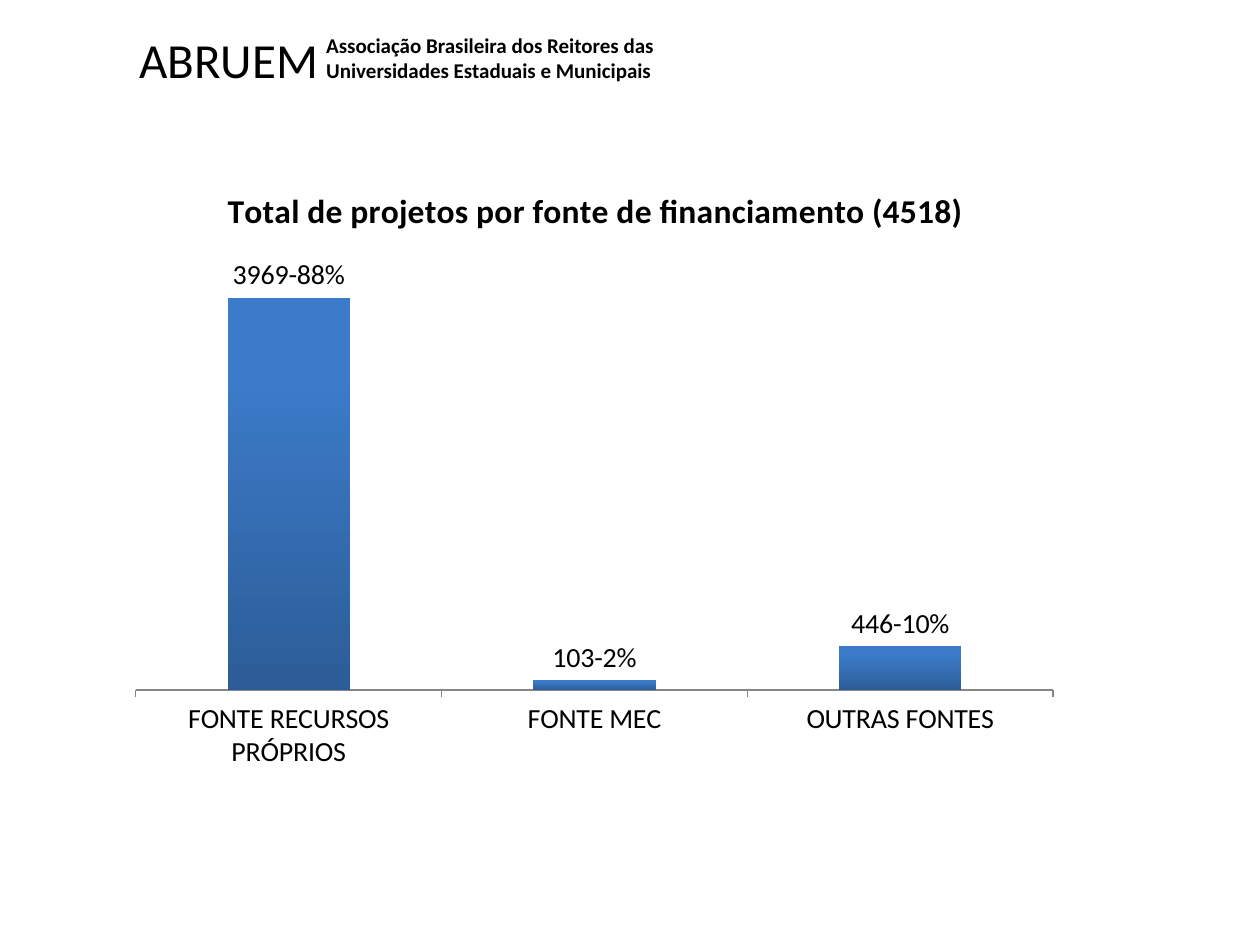
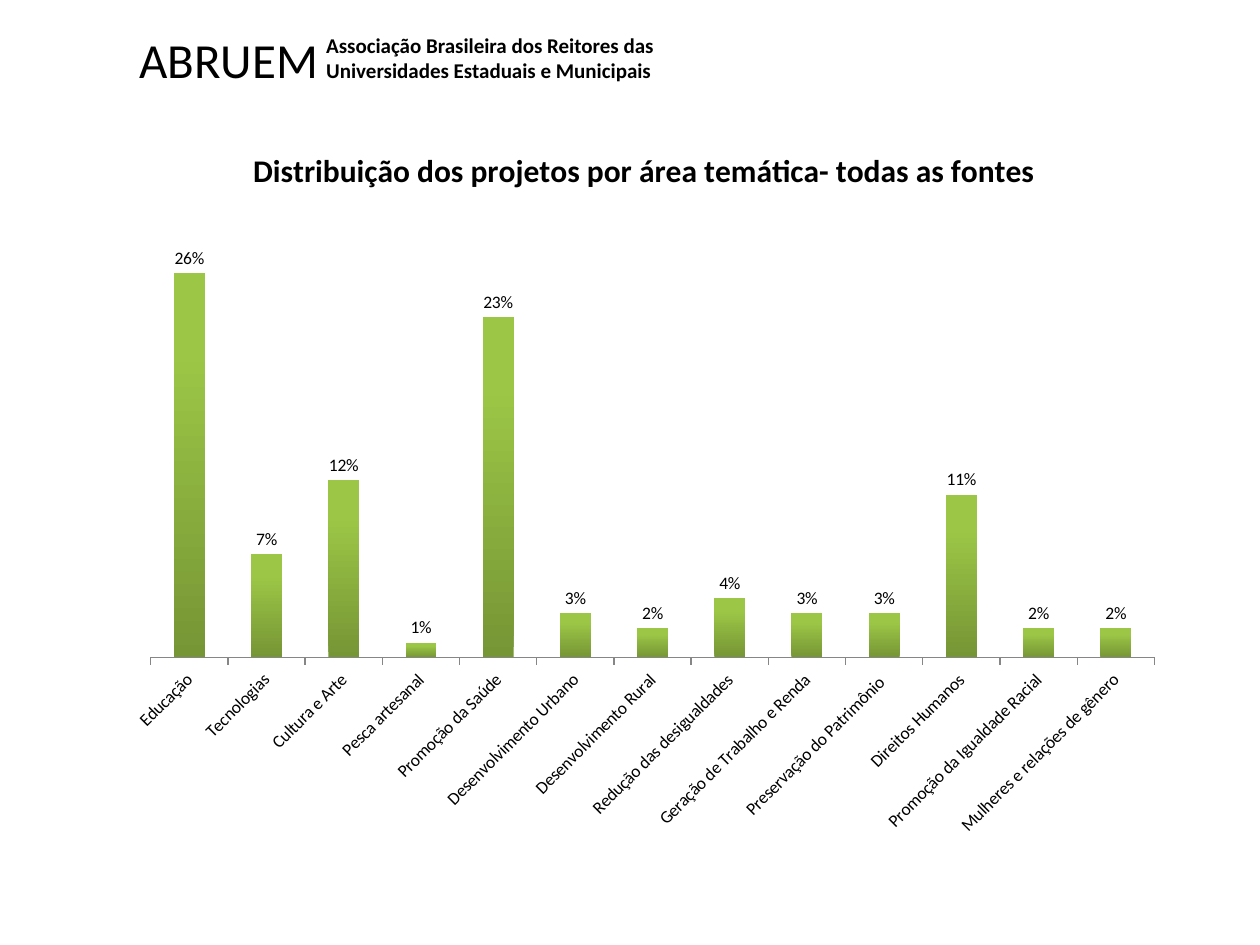
"""Build two chart slides under a shared association header."""
from lxml import etree
from pptx import Presentation
from pptx.chart.data import CategoryChartData
from pptx.dml.color import RGBColor
from pptx.enum.chart import XL_CHART_TYPE, XL_LABEL_POSITION, XL_TICK_MARK
from pptx.enum.text import MSO_ANCHOR, MSO_AUTO_SIZE, PP_ALIGN
from pptx.oxml.ns import qn
from pptx.util import Inches, Pt

COLUMN = XL_CHART_TYPE.COLUMN_CLUSTERED
OUTSIDE_END = XL_LABEL_POSITION.OUTSIDE_END
TICK_OUT = XL_TICK_MARK.OUTSIDE
TOP, MIDDLE = MSO_ANCHOR.TOP, MSO_ANCHOR.MIDDLE
GROW = MSO_AUTO_SIZE.SHAPE_TO_FIT_TEXT
LEFT, CENTER = PP_ALIGN.LEFT, PP_ALIGN.CENTER

FONT = "Calibri"
BLACK = RGBColor(0x00, 0x00, 0x00)
GRAY = RGBColor(0x86, 0x86, 0x86)
BLUES = RGBColor(0x2C, 0x5D, 0x98), RGBColor(0x3C, 0x7B, 0xC9)
GREENS = RGBColor(0x76, 0x95, 0x35), RGBColor(0x9C, 0xC7, 0x46)

HEADER = [
    dict(text="ABRUEM", box=(0.91, 0.15, 1.81, 0.63), size=28,
         align=CENTER, anchor=MIDDLE),
    dict(text="Associação Brasileira dos Reitores das\n"
              "Universidades Estaduais e Municipais",
         box=(2.49, 0.21, 3.35, 0.5), size=12, bold=True, anchor=TOP),
]

CHARTS = [
    dict(
        title="Total de projetos por fonte de financiamento (4518)",
        title_size=19.2, title_percent=(11.1, 2.7),
        box=(0.91, 1.31, 7.64, 4.8), plot_percent=(2.2, 13.4, 95.3, 74.3),
        size=16, colors=BLUES, maximum=4500, number_format="General",
        data=[("FONTE RECURSOS PRÓPRIOS", 3969), ("FONTE MEC", 103),
              ("OUTRAS FONTES", 446)],
        labels=["3969-88%", "103-2%", "446-10%"],
    ),
    dict(
        title="Distribuição dos projetos por área temática- todas as fontes",
        title_size=18, title_percent=(12.5, 2.5),
        box=(0.91, 0.99, 8.43, 5.75), plot_percent=(3.4, 12.3, 94.5, 61.25),
        size=10, colors=GREENS, maximum=0.3, number_format="0%", rotation=-45,
        data=[("Educação", 0.26), ("Tecnologias", 0.07),
              ("Cultura e Arte", 0.12), ("Pesca artesanal", 0.01),
              ("Promoção da Saúde", 0.23), ("Desenvolvimento Urbano", 0.03),
              ("Desenvolvimento Rural", 0.02),
              ("Redução das desigualdades", 0.04),
              ("Geração de Trabalho e Renda", 0.03),
              ("Preservação do Patrimônio ", 0.03), ("Direitos Humanos", 0.11),
              ("Promoção da Igualdade Racial", 0.02),
              ("Mulheres e relações de gênero", 0.02)],
    ),
]


def format_font(font, size, bold=False):
    font.name, font.size, font.bold = FONT, Pt(size), bold
    font.color.rgb = BLACK


def write(tf, text, size, bold=False, align=LEFT):
    for i, line in enumerate(text.split("\n")):
        p = tf.add_paragraph() if i else tf.paragraphs[0]
        p.alignment = align
        r = p.add_run()
        r.text = line
        format_font(r.font, size, bold)


def add_header(slide, master):
    for item in HEADER:
        sp = slide.shapes.add_textbox(*map(Inches, item["box"]))
        tf = sp.text_frame
        tf.word_wrap = True
        tf.vertical_anchor = item["anchor"]
        if item["anchor"] == TOP:
            tf.auto_size = GROW
        write(tf, item["text"], item["size"], item.get("bold", False),
              item.get("align", LEFT))
        master.shapes.element.append(sp.element)


def set_layout(parent, index, percents, inner=False):
    for old in parent.findall(qn("c:layout")):
        parent.remove(old)
    layout = etree.Element(qn("c:layout"))
    manual = etree.SubElement(layout, qn("c:manualLayout"))
    settings = [("layoutTarget", "inner")] if inner else []
    settings += [("xMode", "edge"), ("yMode", "edge")]
    settings += [(tag, percent / 100) for tag, percent in zip("xywh", percents)]
    for tag, value in settings:
        etree.SubElement(manual, qn("c:" + tag)).set("val", str(value))
    parent.insert(index, layout)


def add_column_chart(slide, spec):
    cats, values = zip(*spec["data"])
    data = CategoryChartData(number_format=spec["number_format"])
    data.categories = cats
    data.add_series("Series 1", values)
    chart = slide.shapes.add_chart(COLUMN, *map(Inches, spec["box"]), data).chart
    chart.has_legend = False
    format_font(chart.font, spec["size"])

    title = chart.chart_title
    write(title.text_frame, spec["title"], spec["title_size"], True, CENTER)
    title.include_in_layout = False
    set_layout(title.element, 1, spec["title_percent"])
    plot_area = chart.element.find(".//" + qn("c:plotArea"))
    set_layout(plot_area, 0, spec["plot_percent"], inner=True)

    value_axis, cat_axis = chart.value_axis, chart.category_axis
    value_axis.visible = value_axis.has_major_gridlines = False
    value_axis.minimum_scale, value_axis.maximum_scale = 0, spec["maximum"]
    cat_axis.major_tick_mark = TICK_OUT
    cat_axis.format.line.color.rgb = GRAY
    format_font(cat_axis.tick_labels.font, spec["size"])
    if "rotation" in spec:
        body = plot_area.find(f"{qn('c:catAx')}/{qn('c:txPr')}/{qn('a:bodyPr')}")
        body.set("rot", str(spec["rotation"] * 60000))

    plot = chart.plots[0]
    plot.vary_by_categories = False
    plot.gap_width = 150
    series = plot.series[0]
    fill = series.format.fill
    fill.gradient()
    fill.gradient_angle = 90
    for stop, color, position in zip(fill.gradient_stops, spec["colors"], (0, 0.8)):
        stop.color.rgb, stop.position = color, position

    labels = series.data_labels
    labels.show_value = True
    labels.position = OUTSIDE_END
    labels.number_format = spec["number_format"]
    labels.number_format_is_linked = False
    format_font(labels.font, spec["size"])
    for i, text in enumerate(spec.get("labels", [])):
        label = series.points[i].data_label
        write(label.text_frame, text, spec["size"], align=CENTER)
        label.position = OUTSIDE_END


def main():
    prs = Presentation()
    prs.slide_width, prs.slide_height = Inches(10), Inches(7.5)
    blank = prs.slide_layouts[6]
    for i, spec in enumerate(CHARTS):
        s = prs.slides.add_slide(blank)
        if i == 0:
            add_header(s, prs.slide_master)
        add_column_chart(s, spec)
    prs.save("out.pptx")


if __name__ == "__main__":
    main()
